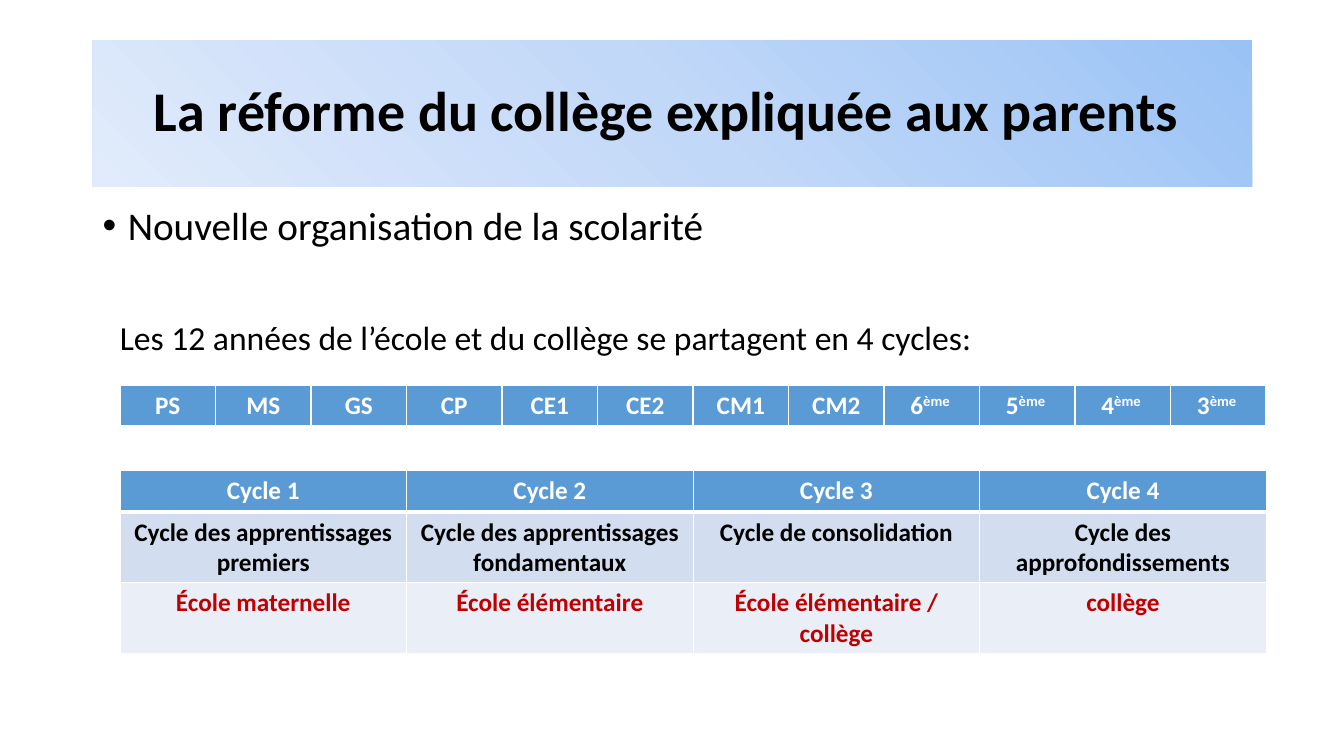
"""Build the slide on the school years and their four cycles."""
from copy import deepcopy
from dataclasses import dataclass

from lxml.etree import SubElement as Sub
from pptx import Presentation as Deck
from pptx.dml.color import RGBColor as Rgb
from pptx.enum.shapes import MSO_SHAPE as Form
from pptx.enum.text import MSO_ANCHOR as Anchor, PP_ALIGN as Align
from pptx.oxml.ns import qn
from pptx.slide import Slide
from pptx.table import _Cell as Cell
from pptx.text.text import _Paragraph as Para
from pptx.util import Inches, Pt

WHITE, BLACK, RED, BLUE = "FFFFFF", "000000", "C00000", "5B9BD5"
LEFT, WIDE = 1.19, 11.37
BOX_LEFT, BOX_WIDE = 0.92, 11.5


@dataclass
class Row:
    """One table row with its look."""
    texts: list[str]
    high: float
    fill: str
    ink: str
    base: int = 1


@dataclass
class Line:
    """One line of body text."""
    text: str
    size: int
    gap: int
    left: float
    hang: float = 0
    mark: str = ""


YEARS = [Row(["PS", "MS", "GS", "CP", "CE1", "CE2", "CM1", "CM2",
              *(f"{n}^ème " for n in (6, 5, 4, 3))], 0.41, BLUE, WHITE, 3)]
CYCLES = [
    Row([f"Cycle {n}" for n in range(1, 5)], 0.41, BLUE, WHITE, 3),
    Row(["Cycle des apprentissages premiers",
         "Cycle des apprentissages fondamentaux",
         "Cycle de consolidation",
         "Cycle des approfondissements"], 0.7, "D2DEEF", BLACK),
    Row(["École maternelle", "École élémentaire",
         "École élémentaire / collège", "collège"], 0.7, "EAEFF7", RED),
]
LINES = [
    Line("Nouvelle organisation de la scolarité", 28, 0, 0.25, -0.25, "•"),
    Line("Les 12 années de l’école et du collège se partagent en 4 cycles:",
         24, 52, 0.17),
]


def hue(code: str) -> Rgb:
    """Turn a hex string into a colour."""
    return Rgb.from_string(code)


def put(item: object, look: dict) -> None:
    """Set each format value on an item."""
    for name, value in look.items():
        setattr(item, name, value)


def write(para: Para, text: str, size: int, ink: str, bold: bool) -> None:
    """Add text to a paragraph, raising what follows a caret."""
    for n, part in enumerate(text.split("^")):
        run = para.add_run()
        run.text = part
        put(run.font, {"name": "Calibri", "size": Pt(size), "bold": bold})
        run.font.color.rgb = hue(ink)
        if n:
            run._r.get_or_add_rPr().set("baseline", "30000")


def edge(cell: Cell, base: int) -> None:
    """Draw white borders round a cell."""
    props = cell._tc.get_or_add_tcPr()
    for side, width in zip("LRTB", (1, 1, 1, base)):
        line = Sub(props, qn(f"a:ln{side}"), w=str(Pt(width)))
        Sub(Sub(line, qn("a:solidFill")), qn("a:srgbClr"), val=WHITE)


def grid(slide: Slide, top: float, rows: list[Row]) -> None:
    """Add a table with equal columns."""
    count = len(rows[0].texts)
    high = sum(row.high for row in rows)
    table = slide.shapes.add_table(len(rows), count, Inches(LEFT), Inches(top),
                                   Inches(WIDE), Inches(high)).table
    for col in table.columns:
        col.width = Inches(WIDE / count)
    for r, row in enumerate(rows):
        table.rows[r].height = Inches(row.high)
        for cell, text in zip(table.rows[r].cells, row.texts):
            edge(cell, row.base)
            cell.fill.solid()
            cell.fill.fore_color.rgb = hue(row.fill)
            para = cell.text_frame.paragraphs[0]
            para.alignment = Align.CENTER
            write(para, text, 18, row.ink, True)


def title(slide: Slide, text: str) -> None:
    """Add the title on its shaded band."""
    band = slide.shapes.add_shape(Form.RECTANGLE, Inches(BOX_LEFT), Inches(0.4),
                                  Inches(BOX_WIDE), Inches(1.45))
    band.shadow.inherit = False
    band.line.fill.background()
    band.fill.gradient()
    band.fill.gradient_angle = 225
    stops = band._element.spPr.find(f".//{qn('a:gsLst')}")
    stops.append(deepcopy(stops[-1]))
    shades = ("9AC3F5", "C2D8F8", "E1EBFB")
    for n, (stop, shade) in enumerate(zip(band.fill.gradient_stops, shades)):
        stop.position = n / 2
        stop.color.rgb = hue(shade)
    put(band.text_frame, {"word_wrap": True, "vertical_anchor": Anchor.MIDDLE})
    para = band.text_frame.paragraphs[0]
    put(para, {"alignment": Align.CENTER, "line_spacing": 0.9})
    write(para, text, 40, BLACK, True)


def body(slide: Slide, lines: list[Line]) -> None:
    """Add the body text."""
    frame = slide.shapes.add_textbox(Inches(BOX_LEFT), Inches(2),
                                     Inches(BOX_WIDE), Inches(1.7)).text_frame
    frame.word_wrap = True
    for n, line in enumerate(lines):
        para = frame.add_paragraph() if n else frame.paragraphs[0]
        put(para, {"line_spacing": 0.9, "space_before": Pt(line.gap)})
        props = para._p.get_or_add_pPr()
        props.set("marL", str(Inches(line.left)))
        props.set("indent", str(Inches(line.hang)))
        if line.mark:
            Sub(props, qn("a:buFont"), typeface="Arial")
            Sub(props, qn("a:buChar"), char=line.mark)
        write(para, line.text, line.size, BLACK, False)


def main() -> None:
    """Build and save the deck."""
    deck = Deck()
    put(deck, {"slide_width": Inches(13.33), "slide_height": Inches(7.5)})
    slide = deck.slides.add_slide(deck.slide_layouts[6])
    title(slide, "La réforme du collège expliquée aux parents ")
    body(slide, LINES)
    grid(slide, 4.67, CYCLES)
    grid(slide, 3.82, YEARS)
    deck.save("out.pptx")


if __name__ == "__main__":
    main()
